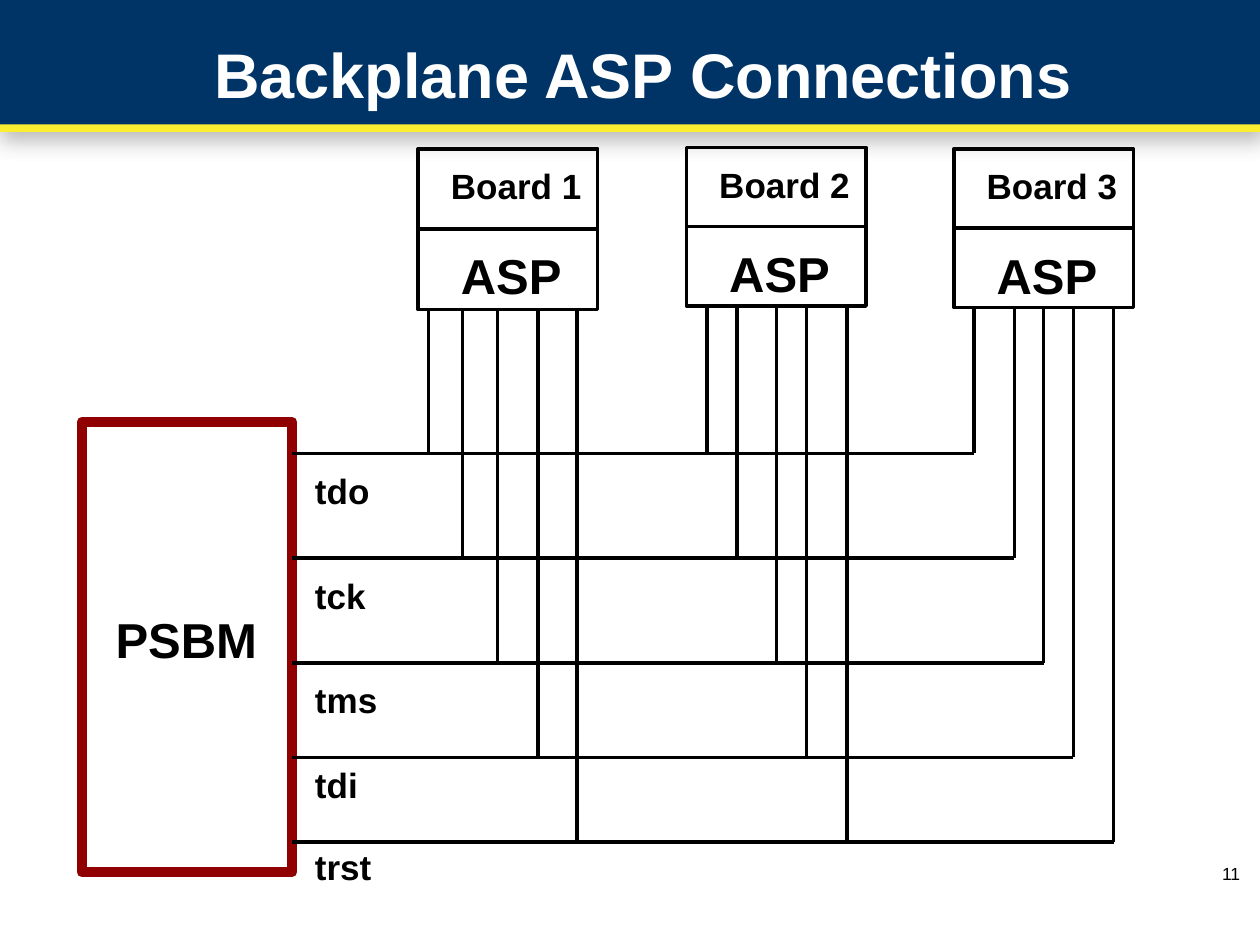
from lxml.etree import SubElement
from pptx import Presentation
from pptx.dml.color import RGBColor
from pptx.enum.shapes import MSO_CONNECTOR, MSO_SHAPE
from pptx.enum.text import MSO_ANCHOR, MSO_AUTO_SIZE, PP_ALIGN
from pptx.oxml.ns import qn
from pptx.util import Cm, Pt

COLORS = {"navy": "003466", "yellow": "FBED30", "red": "900000",
          "black": "000000", "white": "FFFFFF", "shade": "A6A6A6"}

# Signal name, height of its bus line, top of its label
BUSES = [("tdo", 9.14, 9.35), ("tck", 11.25, 11.46), ("tms", 13.36, 13.56),
         ("tdi", 15.27, 15.27), ("trst", 16.97, 16.92)]

# Board name, left, top, cell height, one wire position per bus
BOARDS = [("Board 1", 8.43, 3, 1.62, (8.64, 9.32, 10.03, 10.85, 11.63)),
          ("Board 2", 13.84, 2.97, 1.6, (14.25, 14.86, 15.65, 16.26, 17.07)),
          ("Board 3", 19.23, 3, 1.6, (19.63, 20.45, 21.04, 21.64, 22.45))]
BOARD_W = 3.62


def color(name):
    return RGBColor.from_string(COLORS[name])


def apply(target, values):
    for key, value in values.items():
        setattr(target, key, value)


class Canvas:
    """Current slide and the style shared by its elements."""
    font = {"name": "Arial", "bold": True}
    frame = {"word_wrap": True, "auto_size": MSO_AUTO_SIZE.SHAPE_TO_FIT_TEXT}
    line = 2

    def __init__(self, deck):
        self.slide = deck.slides.add_slide(deck.slide_layouts[5])
        self.shapes = self.slide.shapes

    def label(self, frame, text, size, tint="black", align=PP_ALIGN.LEFT, **font):
        par = frame.paragraphs[0]
        par.alignment = align
        run = par.add_run()
        run.text = text
        apply(run.font, {**self.font, "size": Pt(size), **font})
        run.font.color.rgb = color(tint)

    def title(self, text, box, size):
        """Fill the title placeholder and bring it to the front."""
        shape = self.shapes.title
        apply(shape, dict(zip(("left", "top", "width", "height"), map(Cm, box))))
        apply(shape.text_frame, {"word_wrap": True,
                                 "vertical_anchor": MSO_ANCHOR.MIDDLE})
        self.label(shape.text_frame, text, size, "white", PP_ALIGN.CENTER)
        self.shapes._spTree.append(shape._element)

    def text(self, text, box, size, **style):
        shape = self.shapes.add_textbox(*map(Cm, box))
        apply(shape.text_frame, self.frame)
        self.label(shape.text_frame, text, size, **style)

    def rect(self, box, fill=None, edge=None, width=line):
        shape = self.shapes.add_shape(MSO_SHAPE.RECTANGLE, *map(Cm, box))
        shape.shadow.inherit = False
        for part, tint in ((shape.fill, fill), (shape.line.fill, edge)):
            if tint:
                part.solid()
                part.fore_color.rgb = color(tint)
            else:
                part.background()
        if edge:
            shape.line.width = Pt(width)
        return shape

    def shade(self, shape):
        """Cast a soft shadow straight down."""
        effects = shape._element.spPr.find(qn("a:effectLst"))
        outer = SubElement(effects, qn("a:outerShdw"), blurRad=str(Pt(12)),
                           dist=str(Pt(8)), dir="5400000", rotWithShape="0")
        tint = SubElement(outer, qn("a:srgbClr"), val=COLORS["shade"])
        SubElement(tint, qn("a:alpha"), val="78000")

    def wire(self, *ends):
        link = self.shapes.add_connector(MSO_CONNECTOR.STRAIGHT, *map(Cm, ends))
        link.line.color.rgb = color("black")
        link.line.width = Pt(self.line)
        SubElement(link._element.spPr, qn("a:effectLst"))
        return link

    def board(self, name, left, top, high, wires):
        self.rect((left, top, BOARD_W, high), edge="black")
        asp = self.rect((left, top + high, BOARD_W, high), edge="black")
        self.text(name, (left + 0.41, top + 0.2, 3.5, 1.12), 20)
        self.text("ASP", (left + 0.61, top + 1.82, 2.62, 1.45), 28)
        foot = top + 2 * high
        for x, (_, y, _) in zip(wires, BUSES):
            link = self.wire(x, foot, x, y)
            if abs(x - left - BOARD_W / 2) < 0.01:
                link.begin_connect(asp, 2)

    def bus(self, name, y, top, end):
        self.wire(5.89, y, end, y)
        self.text(name, (6.1, top, 1.83, 1.12), 20)


def main():
    deck = Presentation()
    apply(deck, {"slide_width": Cm(25.4), "slide_height": Cm(19.05)})
    page = Canvas(deck)

    page.shade(page.rect((0, 0, 25.48, 2.54), fill="navy"))
    page.rect((0, 2.51, 25.48, 0.15), fill="yellow")
    page.title("Backplane ASP Connections", (0.53, 0.28, 24.87, 2.39), 36)
    page.text("11", (19.33, 17.27, 5.92, 1.32), 10,
              align=PP_ALIGN.RIGHT, bold=False)

    page.rect((1.65, 8.51, 4.24, 9.07), edge="red", width=6)
    page.text("PSBM", (2.08, 12.17, 3.42, 1.45), 28)
    for board in BOARDS:
        page.board(*board)
    for bus, end in zip(BUSES, BOARDS[-1][-1]):
        page.bus(*bus, end)

    deck.save("out.pptx")


if __name__ == "__main__":
    main()
